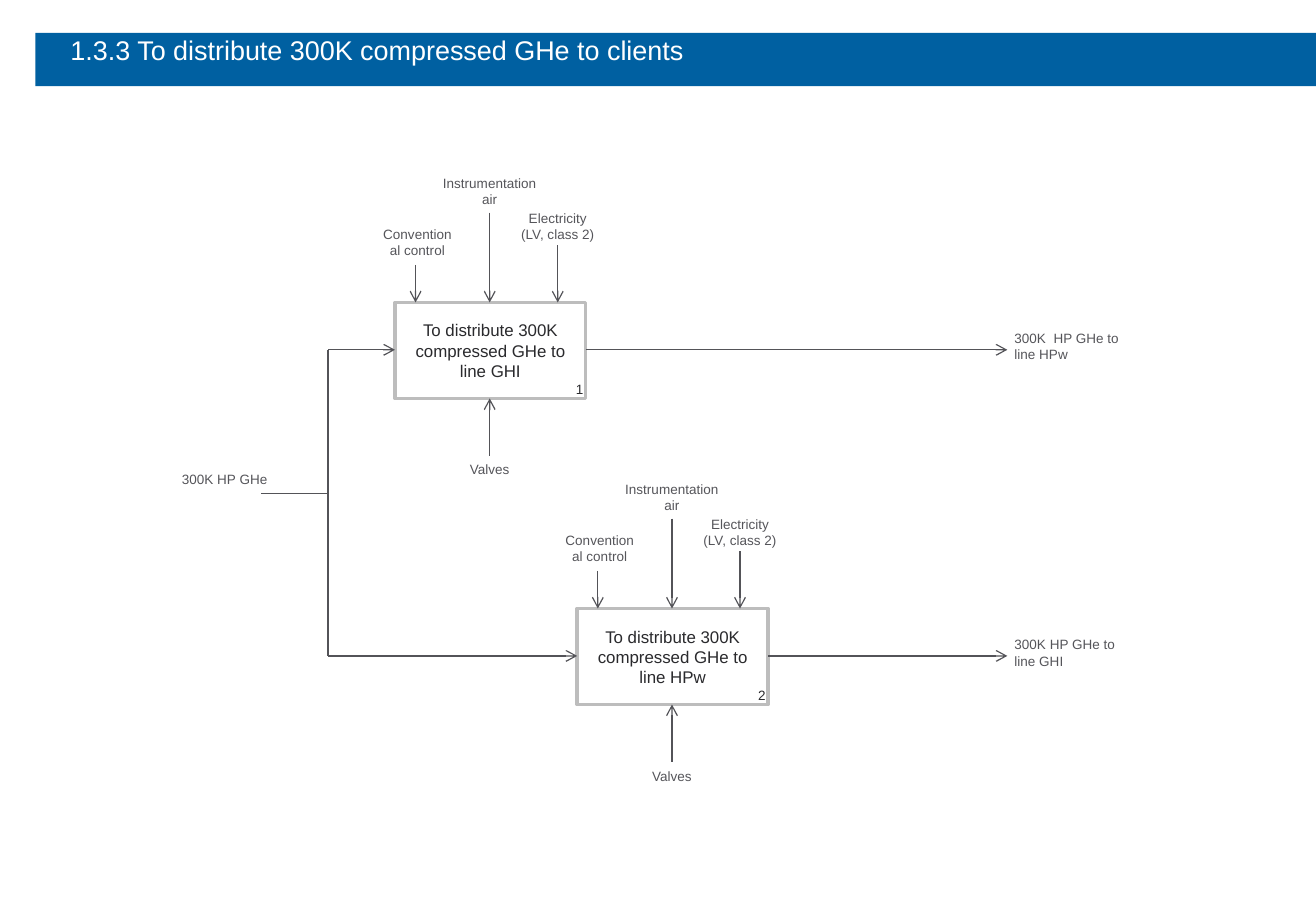
from lxml import etree
from pptx import Presentation
from pptx import util as u
from pptx.dml.color import RGBColor
from pptx.enum import shapes, text
from pptx.oxml.ns import qn

PX = u.Inches(1) // 100
COLORS = {"band": "0060A1", "white": "FFFFFF", "border": "BDBDBD",
          "ink": "2A2A2D", "label": "55555A", "line": "535358"}
LEFT, CENTER, RIGHT = (text.PP_ALIGN.LEFT, text.PP_ALIGN.CENTER,
                       text.PP_ALIGN.RIGHT)
BOX_W, BOX_H = 157, 79
TRUNK_X, OUTPUT_X = 270, 829

INPUTS = [
    (["Conventional control"], -21, -68, 79, 17, -31),
    (["Instrumentation air"], 23, -110, 110, 78, -74),
    (["Electricity", "(LV, class 2)"], 87, -81, 94, 134, -47),
]
FUNCTIONS = [
    ("1", 325, 249, "To distribute 300K compressed GHe to line GHI",
     "300K  HP GHe to line HPw", 126),
    ("2", 475, 501, "To distribute 300K compressed GHe to line HPw",
     "300K HP GHe to line GHI", 110),
]


def rgb(name):
    return RGBColor.from_string(COLORS[name])


def px(*lengths):
    return [n * PX for n in lengths]


def write(tf, lines, size, color, align, **frame):
    for name, value in {"word_wrap": True, **frame}.items():
        setattr(tf, name, value)
    for i, line in enumerate(lines):
        p = tf.paragraphs[0] if i == 0 else tf.add_paragraph()
        p.alignment = align
        r = p.add_run()
        r.text = line
        for name, value in {"name": "Arial", "size": u.Pt(size)}.items():
            setattr(r.font, name, value)
        r.font.color.rgb = rgb(color)


def add_label(s, lines, x, y, w, h, align=CENTER, size=8, color="label", **frame):
    sp = s.shapes.add_textbox(*px(x, y, w, h))
    write(sp.text_frame, lines, size, color, align, **frame)


def add_rect(s, x, y, w, h, fill, border=None):
    sp = s.shapes.add_shape(shapes.MSO_SHAPE.RECTANGLE, *px(x, y, w, h))
    sp.shadow.inherit = False
    sp.fill.solid()
    sp.fill.fore_color.rgb = rgb(fill)
    if border:
        sp.line.color.rgb = rgb(border)
        sp.line.width = u.Pt(2)
    else:
        sp.line.fill.background()
    return sp


def add_line(s, x1, y1, x2, y2, arrow=True):
    line = s.shapes.add_connector(shapes.MSO_CONNECTOR.STRAIGHT,
                                  *px(x1, y1, x2, y2))
    line.line.color.rgb = rgb("line")
    line.line.width = u.Pt(0.75)
    if arrow:
        ln = line.line._get_or_add_ln()
        etree.SubElement(ln, qn("a:tailEnd"), type="arrow")
    etree.SubElement(line._element.spPr, qn("a:effectLst"))


def add_title(s, title):
    add_rect(s, 29, 27, 1055, 44, "band")
    margins = {f"margin_{side}": 0 for side in ("left", "top", "right", "bottom")}
    add_label(s, [title], 58, 28, 975, 39, LEFT, 16, "white", **margins)


def add_function(s, number, x, y, task, output, output_w):
    sp = add_rect(s, x, y, BOX_W, BOX_H, "white", "border")
    write(sp.text_frame, [task], 10, "ink", CENTER,
          vertical_anchor=text.MSO_ANCHOR.MIDDLE)
    add_label(s, [number], x + 138, y + 60, 27, 24, RIGHT, color="ink",
              word_wrap=False)

    for lines, dx, dy, w, arrow_dx, arrow_dy in INPUTS:
        add_label(s, lines, x + dx, y + dy, w, 37)
        add_line(s, x + arrow_dx, y + arrow_dy, x + arrow_dx, y)

    bottom, middle = y + BOX_H, y + 39
    add_line(s, x + 78, bottom + 47, x + 78, bottom)
    add_label(s, ["Valves"], x + 15, bottom + 47, 126, 24)
    add_line(s, TRUNK_X, middle, x, middle)
    add_line(s, x + BOX_W, middle, OUTPUT_X, middle)
    add_label(s, [output], OUTPUT_X - 4, y + 18, output_w, 37, LEFT)


def main():
    prs = Presentation()
    prs.slide_width, prs.slide_height = px(1083, 750)
    s = prs.slides.add_slide(prs.slide_layouts[6])
    add_title(s, "1.3.3 To distribute 300K compressed GHe to clients")
    for function in FUNCTIONS:
        add_function(s, *function)
    add_label(s, ["300K HP GHe"], 132, 383, 98, 24, RIGHT)
    add_line(s, 215, 406, TRUNK_X, 406, arrow=False)
    add_line(s, TRUNK_X, 288, TRUNK_X, 540, arrow=False)
    prs.save("out.pptx")


if __name__ == "__main__":
    main()
